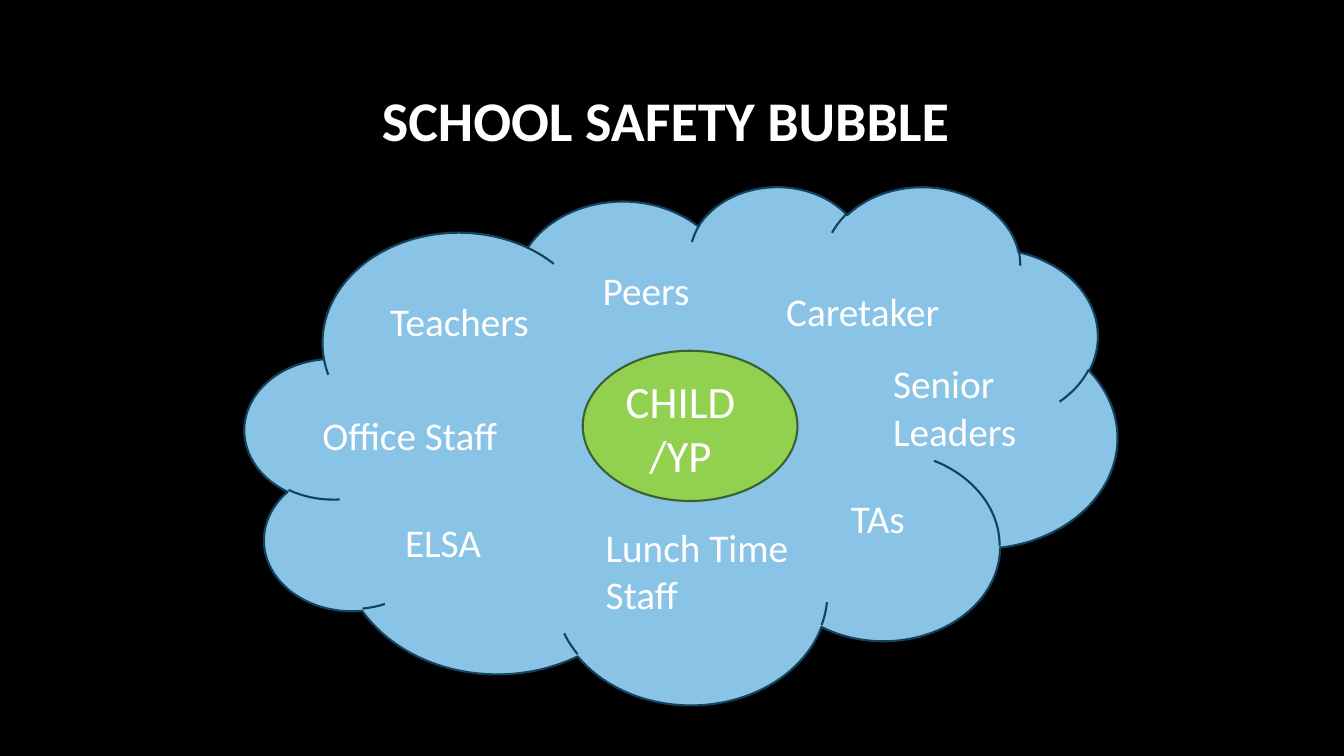
from pptx import Presentation
from pptx.dml.color import RGBColor
from pptx.enum.shapes import MSO_SHAPE
from pptx.enum.text import MSO_ANCHOR, MSO_AUTO_SIZE, PP_ALIGN
from pptx.util import Inches, Pt

TITLE = "SCHOOL SAFETY BUBBLE"
TITLE_BOX = (1.06, 0.39, 11.08, 1.59)
BUBBLES = [
    (MSO_SHAPE.CLOUD, (2.43, 1.84, 8.65, 5.14), "89C3E5", "14415C"),
    (MSO_SHAPE.OVAL, (5.78, 3.48, 2.13, 1.49), "92D050", "3A6231"),
]
CHILD = ("CHILD /YP", (6.05, 3.66, 1.4, 1.18))
LABEL_WIDTH = 2.13
LINE_HEIGHTS = {1: 0.57, 2: 1.04}
PEOPLE = [
    ("Teachers", 3.77, 2.9, 1),
    ("Peers", 5.88, 2.59, 1),
    ("Caretaker", 7.7, 2.8, 1),
    ("TAs", 8.34, 4.85, 1),
    ("Lunch Time Staff", 5.91, 5.14, 2),
    ("ELSA", 3.92, 5.09, 1),
    ("Office Staff", 3.1, 4.03, 1),
    ("Senior Leaders", 8.76, 3.52, 2),
]
TITLE_FONT = {"name": "Calibri", "size": Pt(40), "bold": True}
CHILD_FONT = {"name": "Calibri", "size": Pt(32)}
LABEL_FONT = {"name": "Calibri", "size": Pt(28)}


def color(value):
    return RGBColor.from_string(value)


def inches(box):
    return [Inches(v) for v in box]


def write(tf, text, font, align):
    tf.word_wrap = True
    p = tf.paragraphs[0]
    p.alignment = align
    r = p.add_run()
    r.text = text
    for key, value in font.items():
        setattr(r.font, key, value)
    r.font.color.rgb = color("FFFFFF")


def add_label(s, text, box, font, align):
    tf = s.shapes.add_textbox(*inches(box)).text_frame
    write(tf, text, font, align)
    tf.auto_size = MSO_AUTO_SIZE.SHAPE_TO_FIT_TEXT


def add_bubble(s, kind, box, fill, line):
    sp = s.shapes.add_shape(kind, *inches(box))
    sp.shadow.inherit = False
    sp.fill.solid()
    sp.fill.fore_color.rgb = color(fill)
    sp.line.color.rgb = color(line)
    sp.line.width = Pt(1.5)


def main():
    prs = Presentation()
    prs.slide_width, prs.slide_height = Inches(13.33), Inches(7.5)
    s = prs.slides.add_slide(prs.slide_layouts[5])
    s.background.fill.solid()
    s.background.fill.fore_color.rgb = color("000000")

    title = s.shapes.title
    title.left, title.top, title.width, title.height = inches(TITLE_BOX)
    write(title.text_frame, TITLE, TITLE_FONT, PP_ALIGN.CENTER)
    title.text_frame.vertical_anchor = MSO_ANCHOR.MIDDLE

    for bubble in BUBBLES:
        add_bubble(s, *bubble)
    add_label(s, *CHILD, CHILD_FONT, PP_ALIGN.CENTER)
    for text, left, top, lines in PEOPLE:
        box = (left, top, LABEL_WIDTH, LINE_HEIGHTS[lines])
        add_label(s, text, box, LABEL_FONT, PP_ALIGN.LEFT)

    prs.save("out.pptx")


if __name__ == "__main__":
    main()
